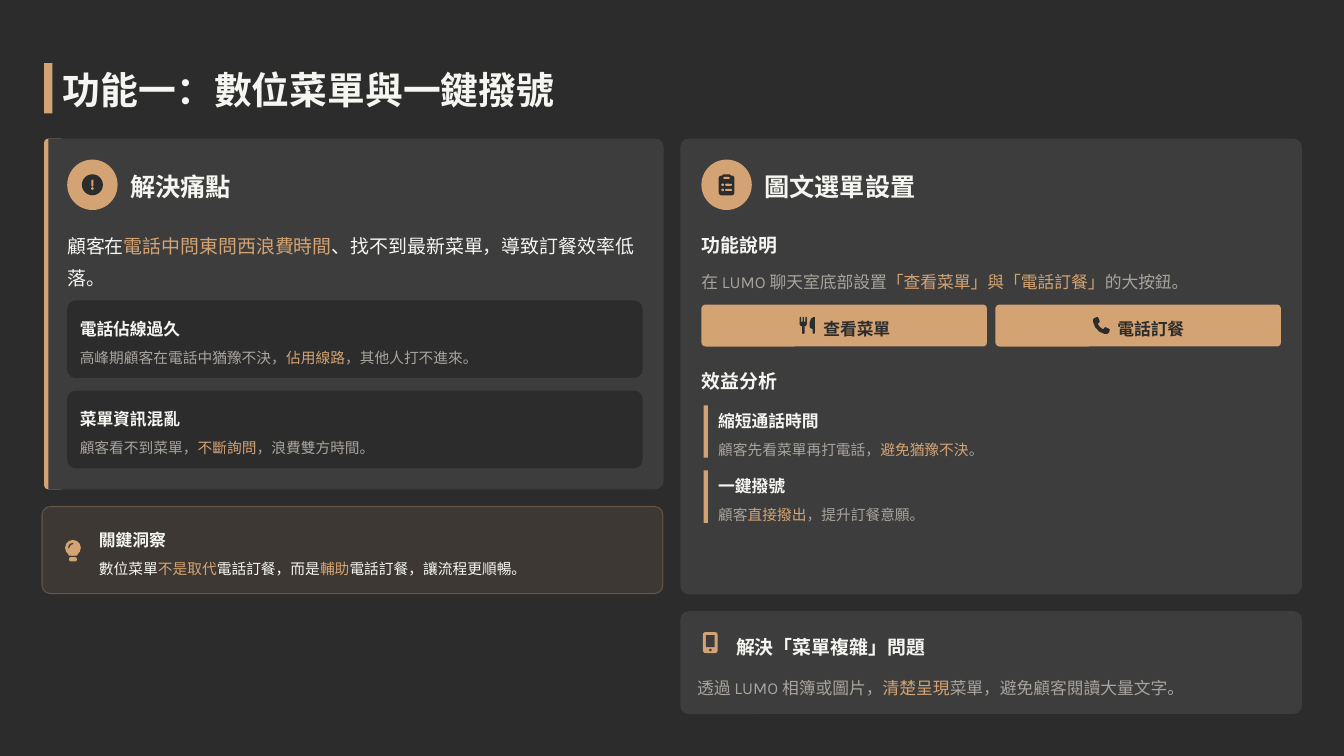
from lxml import etree
from pptx import Presentation
from pptx.dml.color import RGBColor
from pptx.enum.shapes import MSO_SHAPE
from pptx.enum.text import MSO_ANCHOR, PP_ALIGN
from pptx.oxml.ns import qn
from pptx.util import Pt

RECT = MSO_SHAPE.RECTANGLE
ROUNDED = MSO_SHAPE.ROUNDED_RECTANGLE
ROUND_TOP = MSO_SHAPE.ROUND_2_SAME_RECTANGLE
OVAL = MSO_SHAPE.OVAL
MIDDLE = MSO_ANCHOR.MIDDLE
LEFT, CENTER = PP_ALIGN.LEFT, PP_ALIGN.CENTER

COLORS = {
    "dark": "2C2C2C",
    "card": "3D3D3D",
    "accent": "D4A373",
    "light": "F5F5F1",
    "muted": "A8A39D",
    "insight": "3D3833",
}
CJK_FONT, BODY_FONT = "Noto Sans CJK SC", "Karla"

prs = Presentation()
prs.slide_width, prs.slide_height = Pt(1280), Pt(720)
slide = prs.slides.add_slide(prs.slide_layouts[6])
slide.background.fill.solid()
slide.background.fill.fore_color.rgb = RGBColor.from_string(COLORS["dark"])


def block(kind, x, y, w, h, color, radius=0):
    """Add a filled preset shape without outline."""
    shape = slide.shapes.add_shape(kind, Pt(x), Pt(y), Pt(w), Pt(h))
    shape.shadow.inherit = False
    shape.fill.solid()
    shape.fill.fore_color.rgb = RGBColor.from_string(COLORS[color])
    shape.line.fill.background()
    if radius:
        shape.adjustments[0] = radius / min(w, h)
    return shape


def write(x, y, w, h, size, runs, spacing=1.3, bold=False, font=BODY_FONT, align=LEFT):
    """Add one paragraph made of (text, colour) runs."""
    frame = slide.shapes.add_textbox(Pt(x), Pt(y), Pt(w), Pt(h)).text_frame
    frame.word_wrap = True
    frame.vertical_anchor = MIDDLE
    frame.margin_left = frame.margin_right = frame.margin_top = frame.margin_bottom = 0
    paragraph = frame.paragraphs[0]
    paragraph.line_spacing = spacing
    paragraph.alignment = align
    for text, color in runs:
        run = paragraph.add_run()
        run.text = text
        run.font.size = Pt(size)
        run.font.bold = bold
        run.font.name = font
        run.font.color.rgb = RGBColor.from_string(COLORS[color])
        etree.SubElement(run.font._element, qn("a:ea"), typeface=CJK_FONT)


# Title
block(RECT, 42, 60, 8, 48, "accent")
write(60, 68, 498, 40, 36, [("功能一：數位菜單與一鍵撥號", "light")], 0.9, True, CJK_FONT)

# Cards: the first has an accent edge on its left
block(ROUNDED, 42, 132, 20, 334, "accent", 4)
pain_card = block(ROUND_TOP, 172, 6, 334, 586, "card", 8)
pain_card.rotation = 90
block(ROUNDED, 648, 132, 592, 434, "card", 8)
block(ROUNDED, 648, 582, 592, 98, "card", 8)

# Card headings
for x, heading in [(64, "解決痛點"), (668, "圖文選單設置")]:
    block(OVAL, x, 152, 48, 48, "accent")
    write(x + 60, 160.5, 160, 31, 24, [(heading, "light")], 1.1, True, CJK_FONT)

# Pain points
write(64, 216, 557, 58, 18, [
    ("顧客在", "light"),
    ("電話中問東問西浪費時間", "accent"),
    ("、找不到最新菜單，導致訂餐效率低落。", "light"),
], 1.4)
for y in (286, 372):
    block(ROUNDED, 64, y, 548, 74, "dark", 8)

# Key insight
insight = block(ROUNDED, 40, 482.4, 591.4, 83, "accent", 8)
insight.line.color.rgb = RGBColor.from_string(COLORS["accent"])
insight.line.width = Pt(1)
fills = insight._element.spPr.iter(qn("a:srgbClr"))
for color_node, alpha in zip(list(fills), ("10000", "30000")):
    etree.SubElement(color_node, qn("a:alpha"), val=alpha)

# Benefit markers
for y in (386, 448):
    block(RECT, 670.2, y, 4, 50, "accent")

# Heading and detail pairs
DETAILS = [
    (76, 298, 532, "電話佔線過久", [
        ("高峰期顧客在電話中猶豫不決，", "muted"), ("佔用線路", "accent"),
        ("，其他人打不進來。", "muted")]),
    (76, 384, 532, "菜單資訊混亂", [
        ("顧客看不到菜單，", "muted"), ("不斷詢問", "accent"),
        ("，浪費雙方時間。", "muted")]),
    (94.2, 499, 414, "關鍵洞察", [
        ("數位菜單", "light"), ("不是取代", "accent"), ("電話訂餐，而是", "light"),
        ("輔助", "accent"), ("電話訂餐，讓流程更順暢。", "light")]),
    (684, 386, 544, "縮短通話時間", [
        ("顧客先看菜單再打電話，", "muted"), ("避免猶豫不決", "accent"), ("。", "muted")]),
    (684, 448, 544, "一鍵撥號", [
        ("顧客", "muted"), ("直接撥出", "accent"), ("，提升訂餐意願。", "muted")]),
]
for x, y, w, heading, detail in DETAILS:
    write(x, y, w, 24, 16, [(heading, "light")], bold=True)
    write(x, y + 28, w, 22, 14, detail, 1.4)

# Section headings and descriptions on the right
for x, y, w, heading in [
    (668, 216, 561, "功能說明"),
    (668, 346, 561, "效益分析"),
    (701, 598.5, 194, "解決「菜單複雜」問題"),
]:
    write(x, y, w, 28, 18, [(heading, "light")], bold=True)
write(668, 252, 560, 26, 16, [
    ("在 LUMO 聊天室底部設置", "muted"),
    ("「查看菜單」與「電話訂餐」", "accent"),
    ("的大按鈕。", "muted"),
], 1.4)
write(664, 638, 568, 26, 16, [
    ("透過 LUMO 相簿或圖片，", "muted"),
    ("清楚呈現", "accent"),
    ("菜單，避免顧客閱讀大量文字。", "muted"),
], 1.4)

# Menu buttons
for x, label in [(668, "查看菜單"), (948, "電話訂餐")]:
    block(ROUNDED, x, 290, 272, 40, "accent", 4)
    write(x + 20, 290, 256, 40, 16, [(label, "dark")], bold=True, align=CENTER)

# Alert icon
block(OVAL, 78, 166, 20, 20, "dark")
block(ROUNDED, 87.1, 171, 1.9, 6.7, "accent", 0.9)
block(OVAL, 86.8, 178.3, 2.5, 2.5, "accent")

# Clipboard icon
block(ROUNDED, 684.5, 167.2, 15, 18.8, "dark", 2.5)
block(ROUNDED, 687.8, 166, 8.4, 5, "dark", 1.8)
block(ROUNDED, 689, 168.5, 6, 1.9, "accent", 0.9)
for y in (175, 180):
    block(OVAL, 687, y - 0.3, 2.5, 2.5, "accent")
    block(ROUNDED, 690.7, y, 6.4, 1.9, "accent", 0.9)

# Bulb icon
block(OVAL, 62, 514.2, 15, 15, "accent")
block(ROUNDED, 65.7, 530.6, 7.6, 4.2, "accent", 2)

# Tablet icon
block(ROUNDED, 669.5, 602, 14, 20, "accent", 2.5)
block(RECT, 672.3, 604.8, 8.4, 11.6, "card")
block(OVAL, 675.3, 617.8, 2.5, 2.5, "card")

# Fork icon
for x in (761.7, 764.4, 767.1):
    block(ROUNDED, x, 301.8, 1.3, 7, "dark", 0.6)
block(ROUNDED, 761.7, 306.3, 6.7, 4.4, "dark", 2)
block(ROUNDED, 763.9, 308, 2.4, 10, "dark", 1.2)

# Outlines: bulb neck, bulb glint, knife, handset
OUTLINES = [
    ("accent", [(62.8, 525), (76.2, 525), (74.3, 527.3), (73.3, 529.2),
                (65.7, 529.2), (64.7, 527.3)]),
    ("insight", [(65, 521.7), (65.4, 519.6), (66.8, 517.9), (69.5, 517),
                 (69.9, 517.6), (69.4, 518.2), (67.6, 518.9), (66.5, 520.4),
                 (66.1, 522.1), (65.5, 522.3)]),
    ("dark", [(775.4, 301.7), (772.6, 303.2), (771.1, 307.2), (771.1, 311.2),
              (771.9, 312.7), (773.9, 313.2), (773.9, 317.2), (775, 318),
              (776.1, 317.2), (776.1, 302.2)]),
    ("dark", [(1046.2, 302.9), (1045.5, 302.1), (1044.6, 302.1), (1042, 303),
              (1041, 304.5), (1041.1, 306.6), (1043, 311.6), (1047, 315.9),
              (1052, 318.1), (1054.9, 317.9), (1056.3, 316.7), (1057, 314.4),
              (1056.4, 313.2), (1053.2, 311.7), (1052, 312), (1050.6, 313.8),
              (1047.6, 311.5), (1045.4, 308.4), (1047, 307.2), (1047.4, 305.9)]),
]
for color, points in OUTLINES:
    builder = slide.shapes.build_freeform(Pt(points[0][0]), Pt(points[0][1]))
    builder.add_line_segments([(Pt(x), Pt(y)) for x, y in points[1:]], close=True)
    outline = builder.convert_to_shape()
    outline.shadow.inherit = False
    outline.fill.solid()
    outline.fill.fore_color.rgb = RGBColor.from_string(COLORS[color])
    outline.line.fill.background()

prs.save("out.pptx")
